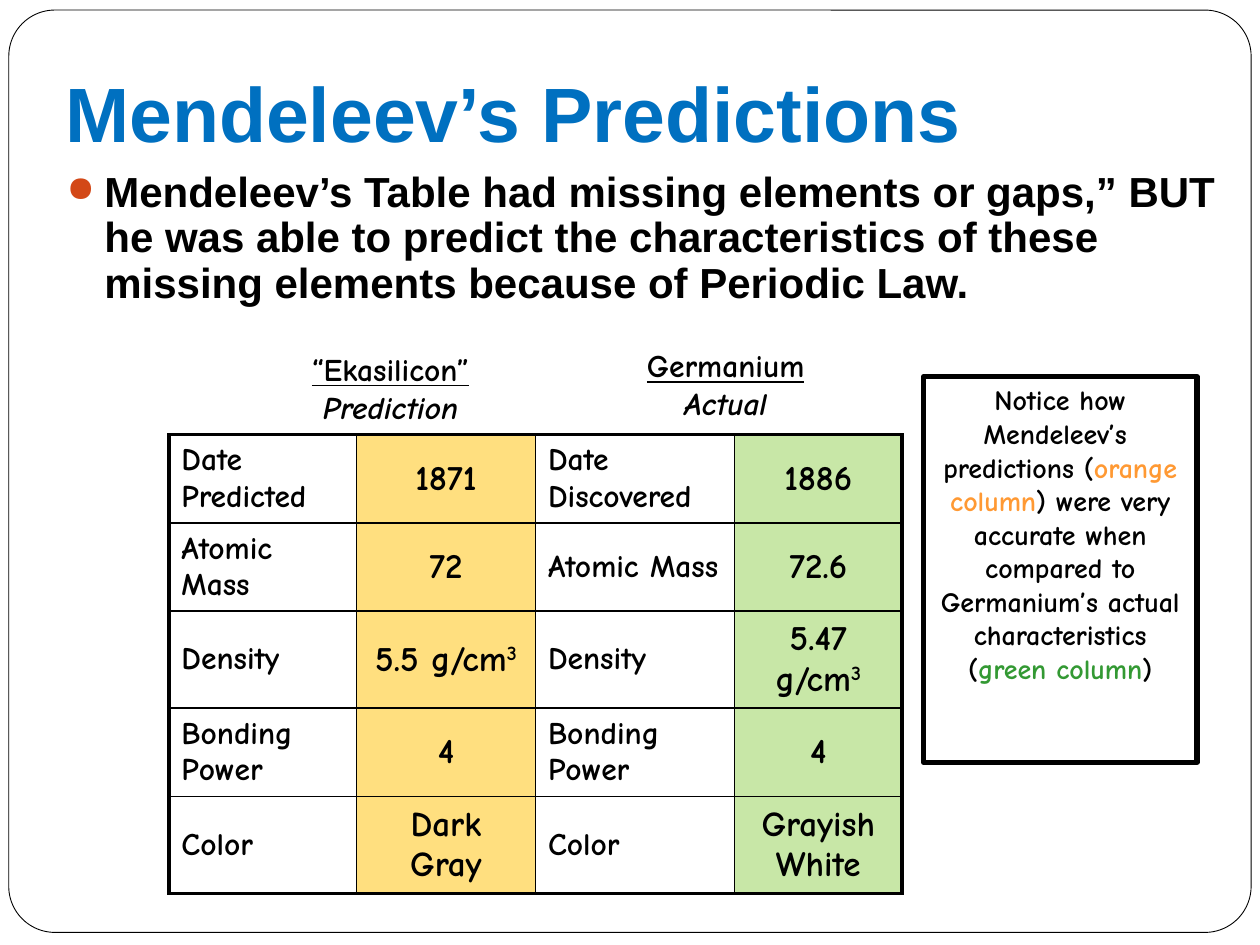
import pptx
import pptx.util
import pptx.dml.color
import pptx.enum.shapes
import pptx.enum.text
import pptx.oxml
import pptx.oxml.ns

Pt = pptx.util.Pt
ALIGN = pptx.enum.text.PP_ALIGN
ANCHOR = pptx.enum.text.MSO_ANCHOR
KIND = pptx.enum.shapes.MSO_SHAPE
UNIT = pptx.util.Inches(0.1)
HEX = {"black": "000000", "white": "FFFFFF", "blue": "0070C0", "rust": "D34817",
       "gold": "FFC000", "lime": "92D050", "orange": "FF9933", "green": "339933"}
HAND = "Comic Neue"
COLS = [14.9, 14.2, 15.8, 13.3]
ROWS = [7, 7, 7.7, 7, 7.7]
DATA = [["Date Predicted", "1871", "Date Discovered", "1886"],
        ["Atomic Mass", "72", "Atomic Mass", "72.6"],
        ["Density", "5.5 g/cm^3", "Density", "5.47 g/cm^3"],
        ["Bonding Power", "4", "Bonding Power", "4"],
        ["Color", "Dark Gray", "Color", "Grayish White"]]
NOTE = [[("Notice how Mendeleev’s ", "black")],
        [("predictions (", "black"), ("orange column", "orange"), (") were very", "black")],
        [("accurate when compared to Germanium’s actual characteristics (", "black"),
         ("green column", "green"), (")", "black")]]


def grid(*cells):
    """Turn columns and rows of a 100 by 75 grid into lengths."""
    return [round(c * UNIT) for c in cells]


def tint(name):
    """Give the named colour."""
    return pptx.dml.color.RGBColor.from_string(HEX[name])


def node(xml):
    """Parse a fragment in the drawing namespace."""
    return pptx.oxml.parse_xml(xml.replace(" ", f" {pptx.oxml.ns.nsdecls('a')} ", 1))


def style(run, size, face=HAND, ink="black"):
    """Format a bold run."""
    font = run.font
    font.size, font.name, font.bold = Pt(size), face, True
    font.color.rgb = tint(ink)


def frame(slide, kind, place, line):
    """Draw an outlined preset shape without shadow."""
    shape = slide.shapes.add_shape(kind, *grid(*place))
    shape.shadow.inherit = False
    shape.fill.background()
    shape.line.color.rgb = tint("black")
    shape.line.width = Pt(line)
    return shape


def label(slide, place, text, size, face=HAND, ink="black", wrap=True):
    """Add a text box and return its text frame."""
    body = slide.shapes.add_textbox(*grid(*place)).text_frame
    body.word_wrap = wrap
    body.text = text
    for para in body.paragraphs:
        style(para.runs[0], size, face, ink)
    return body


def bullet(para):
    """Give a paragraph a hanging round bullet."""
    para.line_spacing, para.space_before = 0.9, Pt(5.8)
    props = para._p.get_or_add_pPr()
    indent = round(3 * UNIT)
    props.set("marL", str(indent))
    props.set("indent", str(-indent))
    props.append(node(f'<a:buClr ><a:srgbClr val="{HEX["rust"]}"/></a:buClr>'))
    props.append(node('<a:buSzPct val="85000"/>'))
    props.append(node('<a:buChar char="●"/>'))


def head(slide, place, name, role):
    """Add an underlined name over an italic role."""
    body = label(slide, place, f"{name}\n{role}", 18, wrap=False)
    top, low = body.paragraphs
    top.alignment = low.alignment = ALIGN.CENTER
    top.runs[0].font.underline = True
    low.runs[0].font.italic = True


def edge(cell, side, width):
    """Draw one border of a cell."""
    cell._tc.get_or_add_tcPr().append(node(
        f'<a:ln{side} w="{Pt(width)}"><a:solidFill><a:srgbClr val="{HEX["black"]}"/>'
        f'</a:solidFill></a:ln{side}>'))


def entry(cell, text, row, col):
    """Fill and format one table cell."""
    value = col % 2 == 1
    size = 20 if value else 18
    rims = {"L": col == 0, "R": col == len(COLS) - 1,
            "T": row == 0, "B": row == len(ROWS) - 1}
    for side, outer in rims.items():
        edge(cell, side, 2.25 if outer else 1)
    cell.fill.solid()
    cell.fill.fore_color.rgb = tint(["white", "gold", "white", "lime"][col])
    if value:
        shade = cell._tc.tcPr.find(pptx.oxml.ns.qn("a:solidFill"))[0]
        shade.append(node('<a:alpha val="50000"/>'))
    cell.vertical_anchor = ANCHOR.MIDDLE
    base, _, power = text.partition("^")
    cell.text_frame.text = base
    para = cell.text_frame.paragraphs[0]
    para.alignment = ALIGN.CENTER if value else ALIGN.LEFT
    para.space_before = Pt(size * 0.2)
    if power:
        para.add_run().text = power
        para.runs[1].font._element.set("baseline", "30000")
    for run in para.runs:
        style(run, size)


def chart(slide, left, top):
    """Build the table of predicted and actual traits."""
    place = grid(left, top, sum(COLS), sum(ROWS))
    table = slide.shapes.add_table(len(ROWS), len(COLS), *place).table
    table.first_row = table.horz_banding = False
    for col, width in zip(table.columns, grid(*COLS)):
        col.width = width
    for row, height in zip(table.rows, grid(*ROWS)):
        row.height = height
    for r, line in enumerate(DATA):
        for c, text in enumerate(line):
            entry(table.cell(r, c), text, r, c)


def note(slide, place):
    """Add the framed remark with coloured words."""
    body = frame(slide, KIND.RECTANGLE, place, 3).text_frame
    body.word_wrap = True
    body.vertical_anchor = ANCHOR.TOP
    for i, parts in enumerate(NOTE):
        para = body.add_paragraph() if i else body.paragraphs[0]
        para.alignment = ALIGN.CENTER
        for text, ink in parts:
            run = para.add_run()
            run.text = text
            style(run, 16, ink=ink)


def main():
    """Build and save the slide."""
    deck = pptx.Presentation()
    deck.slide_width, deck.slide_height = grid(100, 75)
    slide = deck.slides.add_slide(deck.slide_layouts[6])
    card = frame(slide, KIND.ROUNDED_RECTANGLE, (0.7, 0.8, 98.6, 73.2), 0.5)
    card.adjustments[0] = 0.05
    card.fill.solid()
    card.fill.fore_color.rgb = tint("white")
    title = label(slide, (4.2, 4.2, 83.3, 12.5), "Mendeleev’s Predictions", 44, "Arial", "blue")
    title.margin_top = UNIT
    body = label(slide, (4.3, 13.1, 93.2, 20.8),
                 "Mendeleev’s Table had missing elements or gaps,” BUT he was able to predict the "
                 "characteristics of these missing elements because of Periodic Law.", 24, "Arial")
    bullet(body.paragraphs[0])
    chart(slide, 13.4, 34.5)
    head(slide, (23.1, 27.3, 15.8, 7.1), "“Ekasilicon”", "Prediction")
    head(slide, (50.1, 27, 15, 7.1), "Germanium", "Actual")
    note(slide, (73.3, 29.9, 21.7, 30.6))
    deck.save("out.pptx")


if __name__ == "__main__":
    main()
